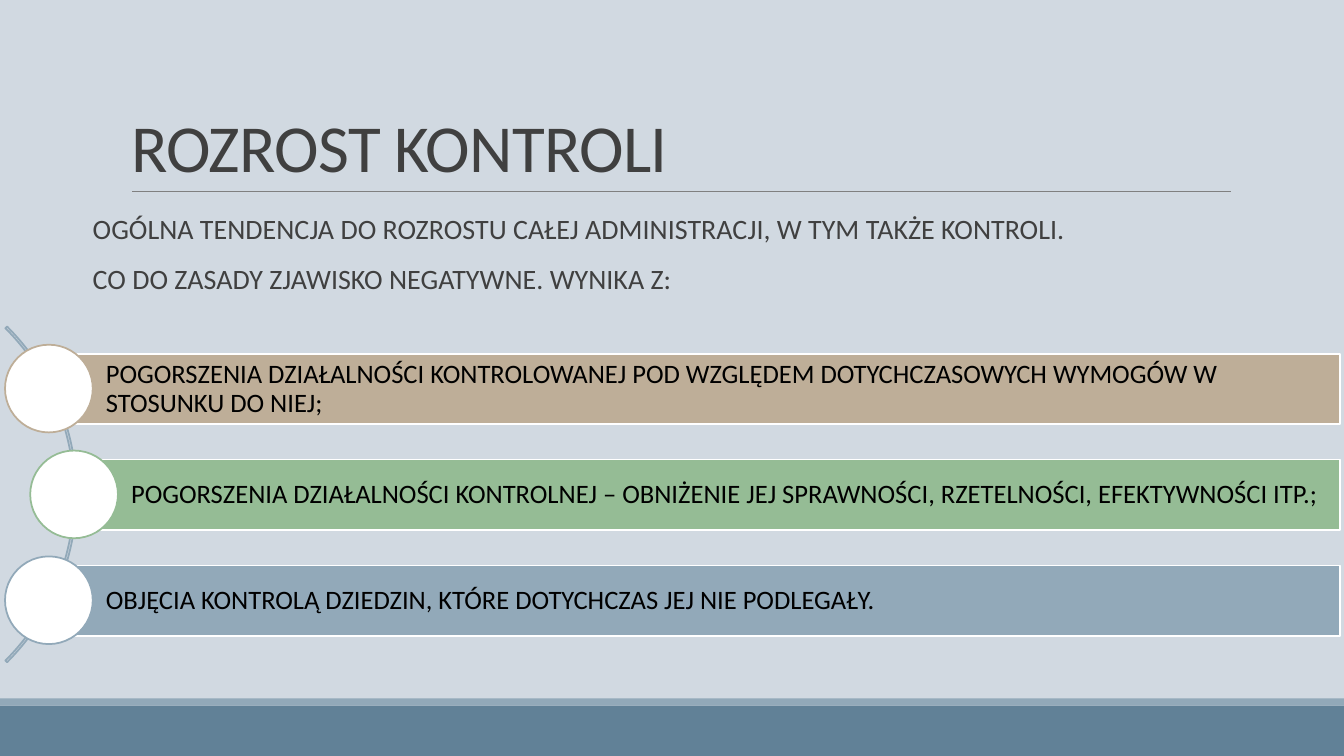
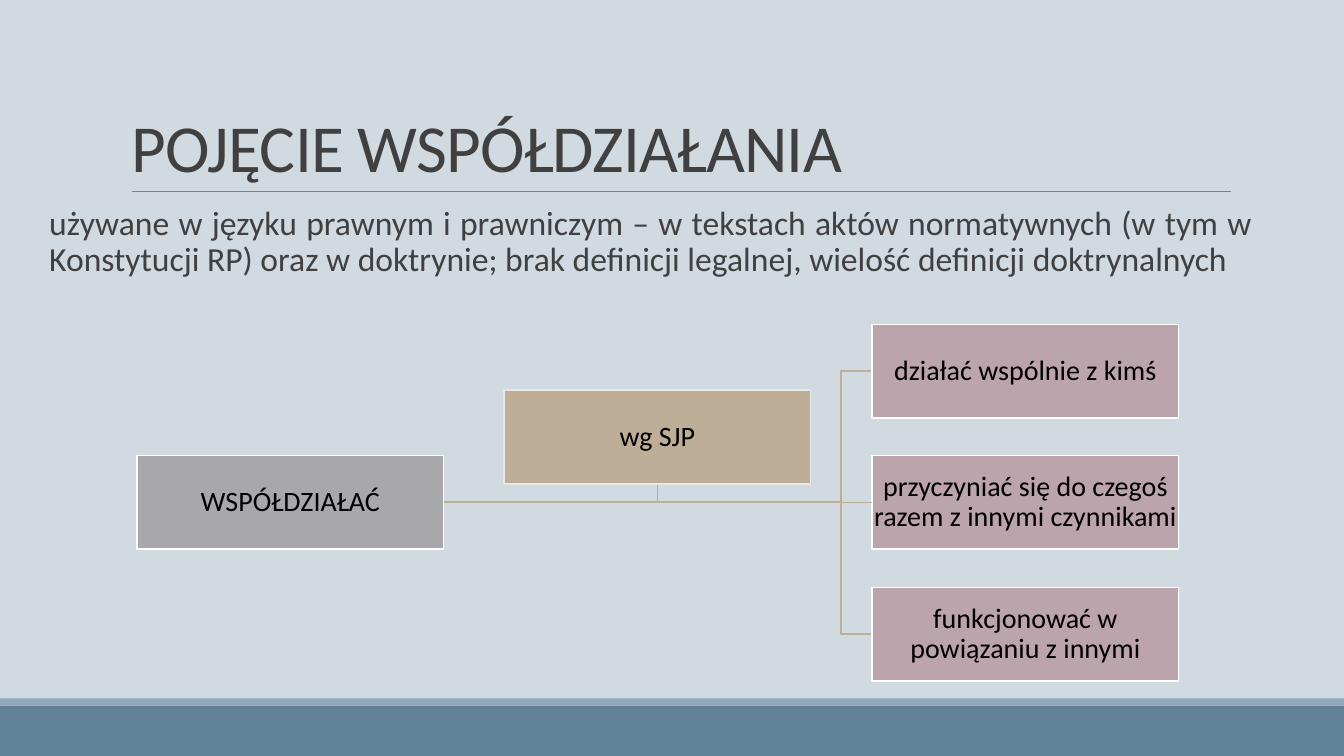
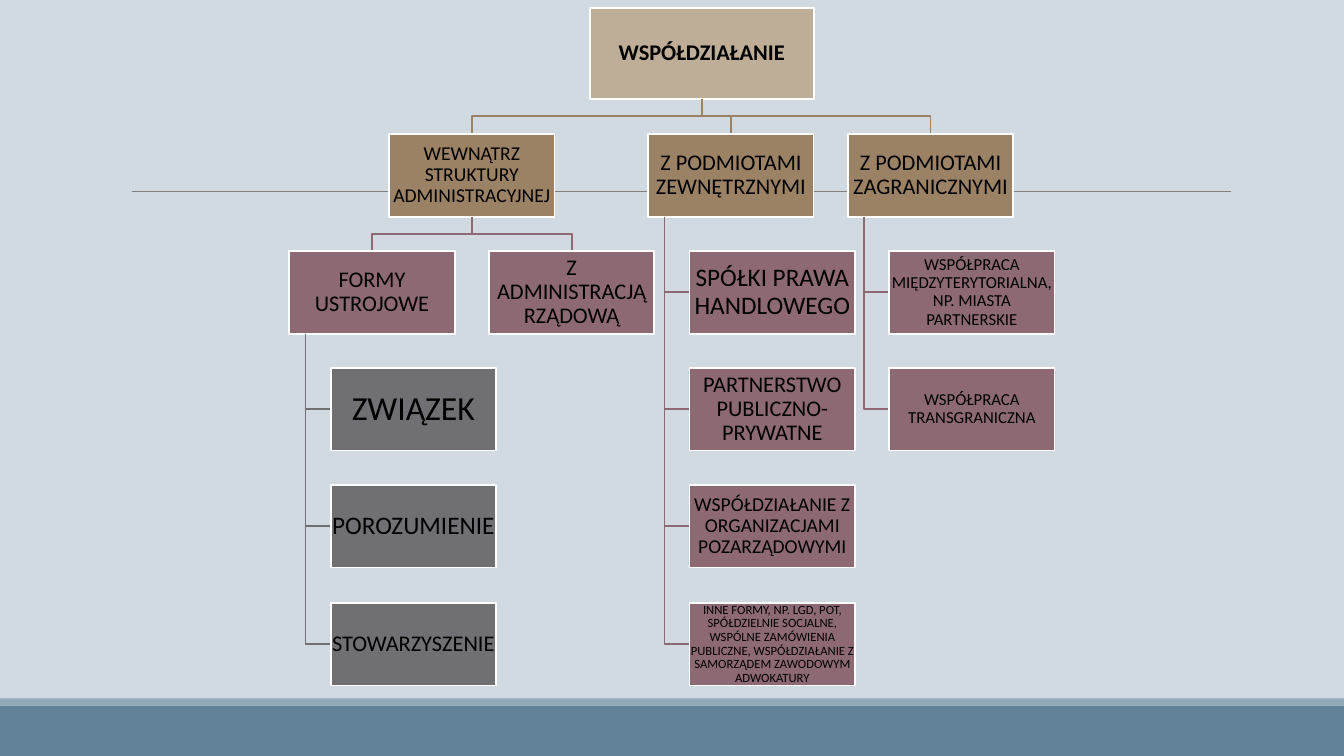
from pptx import Presentation
from pptx import util as u
from pptx.dml.color import RGBColor
from pptx.enum import shapes, text
from pptx.oxml.xmlchemy import OxmlElement

PX = 9144  # EMU in one px: 100 px to the inch
FONT = "Calibri"
INK, BLACK, WHITE = "404040", "000000", "FFFFFF"
BACK, BAND, STRIP, RULE = "D1D9E1", "618197", "92A9B9", "808080"
TAN, BROWN, GREEN = "BEAE98", "9C8265", "95BC95"
ROSE, PLUM, SILVER, GREY = "BBA4AB", "8D6974", "A8A8AC", "6F6F74"
LEFT, MID, FULL = text.PP_ALIGN.LEFT, text.PP_ALIGN.CENTER, text.PP_ALIGN.JUSTIFY
RECT, OVAL = shapes.MSO_SHAPE.RECTANGLE, shapes.MSO_SHAPE.OVAL
ARC = shapes.MSO_SHAPE.BLOCK_ARC
TITLE = [120, 31, 1100, 159]

# Tree on the third slide
NODE_W, NODE_H, INDENT, TRUNK = 164, 82, 41, 16


def emu(vals):
    return [u.Emu(v * PX) for v in vals]


def paint(obj, tone):
    """Give a fill or a font colour format one solid colour."""
    obj.rgb = RGBColor.from_string(tone)


def put(obj, vals):
    for key, val in vals.items():
        setattr(obj, key, val)


def ink(shape, fill, edge, width=1.25):
    """Set fill and outline; None means no paint."""
    if fill:
        shape.fill.solid()
        paint(shape.fill.fore_color, fill)
    else:
        shape.fill.background()
    if edge:
        paint(shape.line.color, edge)
        shape.line.width = u.Pt(width)
    else:
        shape.line.fill.background()
    shape.shadow.inherit = False


def write(frame, lines, size, tone=BLACK, pads=(1, 1, 1, 1), bold=False,
          anchor=text.MSO_ANCHOR.MIDDLE, para=None):
    sides = ("margin_left", "margin_top", "margin_right", "margin_bottom")
    put(frame, dict(zip(sides, emu(pads)), word_wrap=True,
                    auto_size=text.MSO_AUTO_SIZE.NONE, vertical_anchor=anchor))
    for i, line in enumerate(lines):
        par = frame.add_paragraph() if i else frame.paragraphs[0]
        put(par, {"alignment": MID, "line_spacing": 0.9, **(para or {})})
        run = par.add_run()
        run.text = line
        put(run.font, {"name": FONT, "size": u.Pt(size), "bold": bold})
        paint(run.font.color, tone)


def shape(slide, kind, at, fill, edge=None):
    item = slide.shapes.add_shape(kind, *emu(at))
    ink(item, fill, edge)
    return item


def box(slide, at, fill, words, size, edge=WHITE, **style):
    item = shape(slide, RECT, at, fill, edge)
    write(item.text_frame, [words], size, **style)
    return item


def line(slide, ends, tone, width):
    item = slide.shapes.add_connector(shapes.MSO_CONNECTOR.STRAIGHT, *emu(ends))
    paint(item.line.color, tone)
    item.line.width = u.Pt(width)
    item._element.spPr.append(OxmlElement("a:effectLst"))
    return item


def bend(slide, points, tone):
    """Draw an open path with square corners."""
    draft = slide.shapes.build_freeform(*points[0], scale=PX)
    draft.add_line_segments(points[1:], close=False)
    ink(draft.convert_to_shape(), None, tone)


def body(slide, at, lines, size, pads, align):
    frame = slide.shapes.add_textbox(*emu(at)).text_frame
    write(frame, lines, size, INK, pads, anchor=text.MSO_ANCHOR.TOP,
          para={"alignment": align, "space_before": u.Pt(12), "space_after": u.Pt(2)})


def page(deck, title=None):
    """Add a slide with its bands and rule, and a title if there is one."""
    slide = deck.slides.add_slide(deck.slide_layouts[5 if title else 6])
    shape(slide, RECT, [0, 700, 1333, 50], BAND)
    shape(slide, RECT, [0, 693, 1333, 7], STRIP)
    line(slide, [131, 190, 1221, 190], RULE, 0.5)
    if title:
        head = slide.shapes.title
        put(head, dict(zip(("left", "top", "width", "height"), emu(TITLE))))
        write(head.text_frame, [title], 48, INK, (10, 5, 10, 5),
              anchor=text.MSO_ANCHOR.BOTTOM,
              para={"alignment": LEFT, "line_spacing": 0.85})
        run = head.text_frame.paragraphs[0].runs[0]
        run.font._element.set("spc", "-50")
    return slide


# Slide 1: curved list
def growth(deck):
    slide = page(deck, "ROZROST KONTROLI")
    body(slide, [92, 209, 1150, 110], [
        "OGÓLNA TENDENCJA DO ROZROSTU CAŁEJ ADMINISTRACJI, W TYM TAKŻE KONTROLI.",
        "CO DO ZASADY ZJAWISKO NEGATYWNE. WYNIKA Z:"], 20, (0, 5, 0, 5), LEFT)
    arc = shape(slide, ARC, [-395, 255, 471, 471], None, STRIP)
    for i, val in enumerate((189, 27, 0.005)):
        arc.adjustments[i] = val
    rows = [
        (49, TAN, "POGORSZENIA DZIAŁALNOŚCI KONTROLOWANEJ POD WZGLĘDEM "
                  "DOTYCHCZASOWYCH WYMOGÓW W STOSUNKU DO NIEJ;"),
        (74, GREEN, "POGORSZENIA DZIAŁALNOŚCI KONTROLNEJ – OBNIŻENIE JEJ "
                    "SPRAWNOŚCI, RZETELNOŚCI, EFEKTYWNOŚCI ITP.;"),
        (49, STRIP, "OBJĘCIA KONTROLĄ DZIEDZIN, KTÓRE DOTYCHCZAS JEJ NIE PODLEGAŁY."),
    ]
    for i, (x, tone, words) in enumerate(rows):
        y = 351 + 105 * i
        box(slide, [x, y, 1329 - x, 70], tone, words, 19,
            pads=(56, 5, 5, 5), para={"alignment": LEFT})
        shape(slide, OVAL, [x - 44, y - 9, 87, 87], WHITE, tone)


# Slide 2: term and its meanings
def term(deck):
    slide = page(deck, "POJĘCIE WSPÓŁDZIAŁANIA")
    body(slide, [39, 200, 1203, 100], [
        "używane w języku prawnym i prawniczym – w tekstach aktów normatywnych "
        "(w tym w Konstytucji RP) oraz w doktrynie; brak definicji legalnej, "
        "wielość definicji doktrynalnych"], 24, (10, 5, 0, 5), FULL)
    wide, high, left, right, axis = 304, 93, 136, 865, 498
    start, fork = left + wide, right - 31
    bend(slide, [(start, axis), (652, axis), (652, 480)], TAN)
    for y in (axis - 130, axis + 131):
        bend(slide, [(start, axis), (fork, axis), (fork, y), (right, y)], TAN)
    root = box(slide, [left, 452, wide, high], SILVER, "WSPÓŁDZIAŁAĆ", 20)
    kids = [box(slide, [right, y, wide, high], ROSE, words, 20) for y, words in (
        (322, "działać wspólnie z kimś"),
        (452, "przyczyniać się do czegoś razem z innymi czynnikami"),
        (583, "funkcjonować w powiązaniu z innymi"))]
    link = line(slide, [start, axis, right, axis], TAN, 1.25)
    link.begin_connect(root, 3)
    link.end_connect(kids[1], 1)
    box(slide, [500, 387, wide, high], TAN, "wg SJP", 20, edge="E7E7E7")


# Slide 3: tree
def top(row):
    return 133 + 465 * row // 4


def node(slide, x, row, fill, words, size):
    box(slide, [x, top(row), NODE_W, NODE_H], fill, words, size)


def fan(slide, x, y, row, fill, kids):
    """Spread children in a row below the point x, y."""
    for left, words, size in kids:
        mid, end = left + NODE_W // 2, top(row)
        turn = (y + end) // 2
        bend(slide, [(x, y), (x, turn), (mid, turn), (mid, end)], fill)
        node(slide, left, row, fill, words, size)


def hang(slide, left, row, fill, kids):
    """Hang children in a column below the node at left, row."""
    x = left + TRUNK
    for i, (words, size) in enumerate(kids, row + 1):
        y = top(i) + NODE_H // 2
        bend(slide, [(x, top(row) + NODE_H), (x, y), (left + INDENT, y)], fill)
        node(slide, left + INDENT, i, fill, words, size)


def tree(deck):
    slide = page(deck)
    box(slide, [585, 8, 222, 90], TAN, "WSPÓŁDZIAŁANIE", 16, bold=True)
    fan(slide, 696, 98, 0, BROWN, [
        (386, "WEWNĄTRZ STRUKTURY ADMINISTRACYJNEJ", 14),
        (643, "Z PODMIOTAMI ZEWNĘTRZNYMI", 16),
        (841, "Z PODMIOTAMI ZAGRANICZNYMI", 16)])
    fan(slide, 468, top(0) + NODE_H, 1, PLUM, [
        (287, "FORMY USTROJOWE", 16),
        (485, "Z ADMINISTRACJĄ RZĄDOWĄ", 16)])
    hang(slide, 287, 1, GREY, [
        ("ZWIĄZEK", 24), ("POROZUMIENIE", 18), ("STOWARZYSZENIE", 16)])
    hang(slide, 643, 0, PLUM, [
        ("SPÓŁKI PRAWA HANDLOWEGO", 18),
        ("PARTNERSTWO PUBLICZNO-PRYWATNE", 16),
        ("WSPÓŁDZIAŁANIE Z ORGANIZACJAMI POZARZĄDOWYMI", 14),
        ("INNE FORMY, NP. LGD, POT, SPÓŁDZIELNIE SOCJALNE, WSPÓLNE ZAMÓWIENIA "
         "PUBLICZNE, WSPÓŁDZIAŁANIE Z SAMORZĄDEM ZAWODOWYM ADWOKATURY", 9)])
    hang(slide, 841, 0, PLUM, [
        ("WSPÓŁPRACA MIĘDZYTERYTORIALNA, NP. MIASTA PARTNERSKIE", 12),
        ("WSPÓŁPRACA TRANSGRANICZNA", 12)])


def main():
    deck = Presentation()
    put(deck, dict(zip(("slide_width", "slide_height"), emu((1333, 750)))))
    fill = deck.slide_master.background.fill
    fill.solid()
    paint(fill.fore_color, BACK)
    for make in (growth, term, tree):
        make(deck)
    deck.save("out.pptx")


if __name__ == "__main__":
    main()
